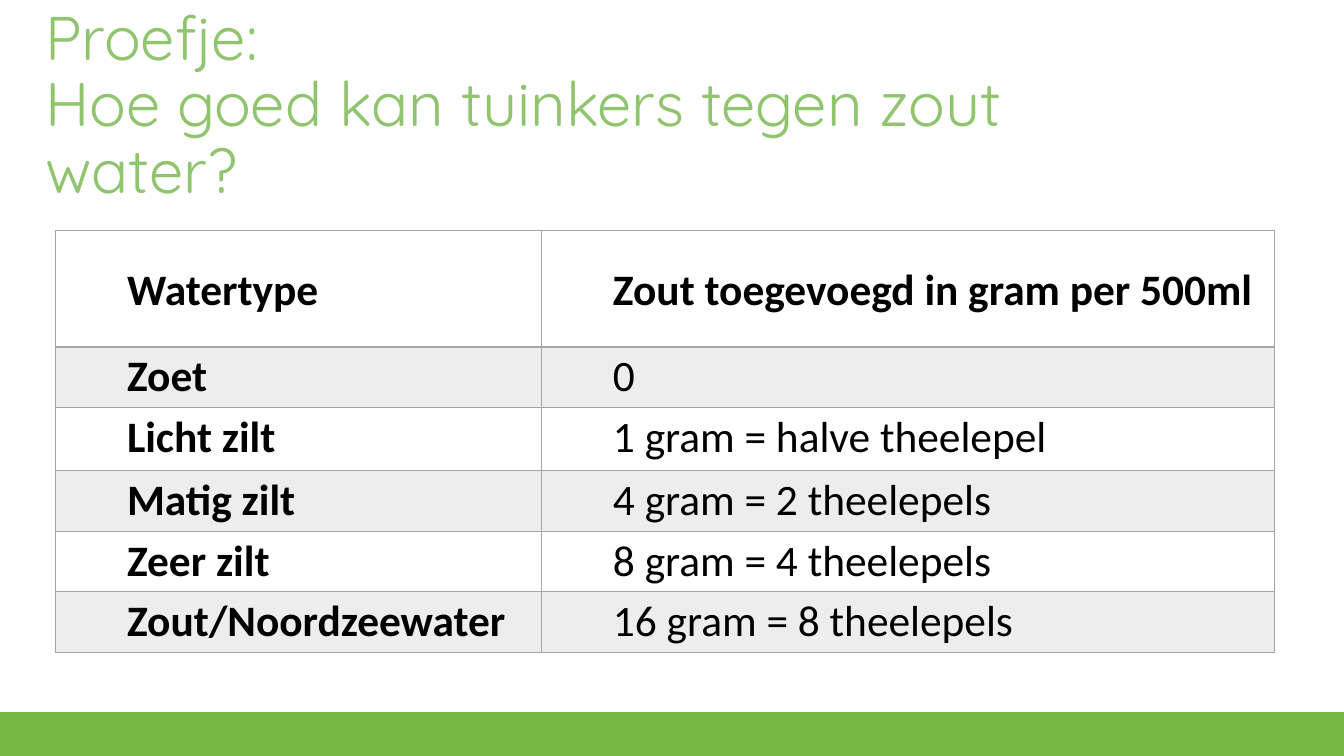
from dataclasses import dataclass

from lxml import etree
from pptx import Presentation
from pptx import util as u
from pptx.dml.color import RGBColor
from pptx.enum import shapes, text
from pptx.oxml import ns


@dataclass(frozen=True)
class Theme:
    """Colours, fonts and type sizes of the slide."""
    bar: str = "75B843"
    heading: str = "91C46E"
    ink: str = "000000"
    grid: str = "A5A5A5"
    band: str = "EDEDED"
    plain: str = "FFFFFF"
    heading_font: str = "Quicksand"
    body_font: str = "Calibri"
    heading_size: int = 44
    body_size: int = 31


class SlideBuilder:
    """Adds styled elements to one slide."""

    def __init__(self, s, theme):
        self.s = s
        self.theme = theme

    def style(self, p, font, size, color, bold=False):
        """Set the font of a paragraph."""
        p.font.name = font
        p.font.size = u.Pt(size)
        p.font.bold = bold
        p.font.color.rgb = RGBColor.from_string(color)

    def bar(self, *box):
        """Draw a solid bar."""
        sp = self.s.shapes.add_shape(shapes.MSO_SHAPE.RECTANGLE, *map(u.Inches, box))
        sp.shadow.inherit = False
        color = RGBColor.from_string(self.theme.bar)
        sp.fill.solid()
        sp.fill.fore_color.rgb = color
        sp.line.color.rgb = color
        sp.line.width = u.Pt(1)

    def title(self, words, *box):
        """Write the slide title."""
        t = self.theme
        tf = self.s.shapes.add_textbox(*map(u.Inches, box)).text_frame
        tf.word_wrap = True
        tf.vertical_anchor = text.MSO_ANCHOR.MIDDLE
        p = tf.paragraphs[0]
        p.text = words
        p.line_spacing = 0.9
        self.style(p, t.heading_font, t.heading_size, t.heading)

    def borders(self, cell, bottom):
        """Draw the four borders of a cell."""
        tc_pr = cell._tc.get_or_add_tcPr()
        for i, (side, width) in enumerate(zip("LRTB", (1, 1, 1, bottom))):
            ln = etree.Element(ns.qn(f"a:ln{side}"), w=str(u.Pt(width)))
            fill = etree.SubElement(ln, ns.qn("a:solidFill"))
            etree.SubElement(fill, ns.qn("a:srgbClr"), val=self.theme.grid)
            tc_pr.insert(i, ln)

    def cell(self, cell, words, header, bold, banded):
        """Fill and style one table cell."""
        t = self.theme
        cell.fill.solid()
        cell.fill.fore_color.rgb = RGBColor.from_string(t.band if banded else t.plain)
        cell.margin_left = u.Inches(0.21)
        cell.margin_right = u.Inches(0.15)
        cell.margin_top = cell.margin_bottom = 0
        cell.vertical_anchor = text.MSO_ANCHOR.MIDDLE if header else text.MSO_ANCHOR.TOP
        p = cell.text_frame.paragraphs[0]
        p.text = words
        p.line_spacing = 1.07
        p._p.get_or_add_pPr().set("marL", str(u.Inches(0.5)))
        self.style(p, t.body_font, t.body_size, t.ink, bold)
        self.borders(cell, 2 if header else 1)

    def table(self, rows, widths, heights, left, top):
        """Add a table with a header row and banded body."""
        box = map(u.Inches, (left, top, sum(widths), sum(heights)))
        table = self.s.shapes.add_table(len(rows), len(widths), *box).table
        table.first_row = table.horz_banding = False
        for column, width in zip(table.columns, widths):
            column.width = u.Inches(width)
        for i, (row, height) in enumerate(zip(rows, heights)):
            table.rows[i].height = u.Inches(height)
            for j, words in enumerate(row):
                self.cell(table.cell(i, j), words, i == 0, i == 0 or j == 0, i % 2 == 1)


def main():
    """Build and save the slide."""
    prs = Presentation()
    prs.slide_width, prs.slide_height = u.Inches(13.33), u.Inches(7.5)
    slide = SlideBuilder(prs.slides.add_slide(prs.slide_layouts[6]), Theme())
    slide.bar(0, 7.07, 13.33, 0.43)
    slide.title("Proefje:\vHoe goed kan tuinkers tegen zout water?", 0.35, 0.32, 10.88, 1.48)
    rows = [
        ("Watertype", "Zout toegevoegd in gram per 500ml"),
        ("Zoet", "0"),
        ("Licht zilt", "1 gram = halve theelepel"),
        ("Matig zilt", "4 gram = 2 theelepels"),
        ("Zeer zilt", "8 gram = 4 theelepels"),
        ("Zout/Noordzeewater", "16 gram = 8 theelepels"),
    ]
    slide.table(rows, (4.82, 7.27), (1.15, 0.6, 0.63, 0.6, 0.6, 0.6), 0.55, 2.29)
    prs.save("out.pptx")


if __name__ == "__main__":
    main()
